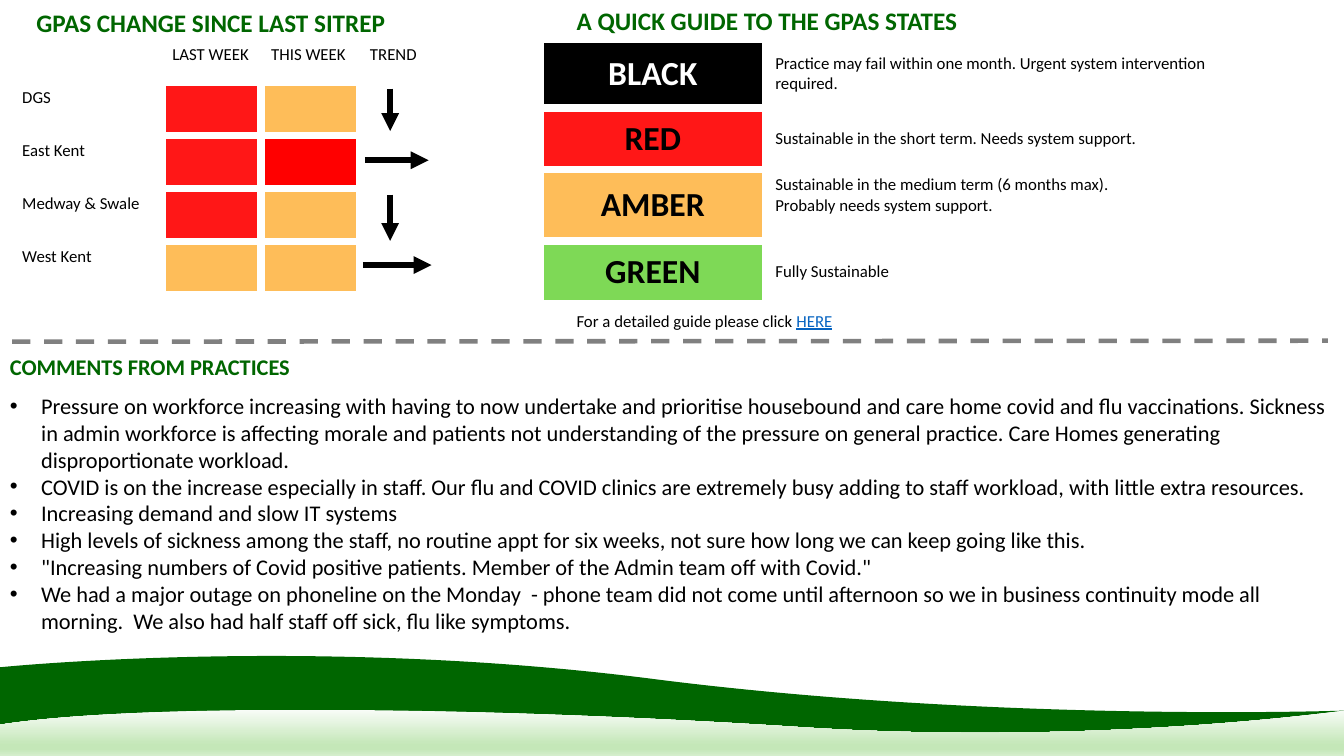
from lxml.etree import SubElement
from pptx import Presentation
from pptx.dml.color import RGBColor
from pptx.enum.dml import MSO_LINE
from pptx.enum.shapes import MSO_CONNECTOR
from pptx.enum.text import MSO_ANCHOR as Anchor, PP_ALIGN as Align
from pptx.oxml.ns import qn
from pptx.util import Inches, Pt

GREEN = RGBColor(0x00, 0x66, 0x00)
BLACK = RGBColor(0x00, 0x00, 0x00)
WHITE = RGBColor(0xFF, 0xFF, 0xFF)
GREY = RGBColor(0x80, 0x80, 0x80)
BLUE = RGBColor(0x05, 0x63, 0xC1)
RED = RGBColor(0xFF, 0x17, 0x17)
PURE = RGBColor(0xFF, 0x00, 0x00)
AMBER = RGBColor(0xFE, 0xBD, 0x59)
LIME = RGBColor(0x7E, 0xD9, 0x56)


def style(para, size, color=BLACK, bold=False):
    for run in para.runs:
        run.font.name = "Calibri"
        run.font.size = Pt(size)
        run.font.bold = bold
        run.font.color.rgb = color


def grid(left, top, cols, rows, cells):
    frame = shapes.add_table(len(rows), len(cols), Inches(left), Inches(top),
                             Inches(sum(cols)), Inches(sum(rows)))
    table = frame.table
    table.first_row = table.horz_banding = False
    for col, width in zip(table.columns, cols):
        col.width = Inches(width)
    for row, height, line in zip(table.rows, rows, cells):
        row.height = Inches(height)
        for cell, (text, fill) in zip(row.cells, line):
            if text:
                cell.text = text
            for para in cell.text_frame.paragraphs:
                style(para, 12)
            if fill is None:
                cell.fill.background()
            else:
                cell.fill.solid()
                cell.fill.fore_color.rgb = fill
            props = cell._tc.get_or_add_tcPr()
            for spot, side in enumerate(("a:lnL", "a:lnR", "a:lnT", "a:lnB")):
                edge = SubElement(props, qn(side), w=str(Pt(6)))
                paint = SubElement(edge, qn("a:solidFill"))
                SubElement(paint, qn("a:srgbClr"), val=str(WHITE))
                props.insert(spot, edge)
    return table


deck = Presentation()
deck.slide_width, deck.slide_height = Inches(13.33), Inches(7.5)
slide = deck.slides.add_slide(deck.slide_layouts[5])
shapes = slide.shapes

waves = [
    (6.5, [(0, 6.62), (0, 6.62), (3.12, 6.3), (6.51, 6.74),
           (9.9, 7.17), (13.33, 7.05), (13.33, 7.05)]),
    (7.04, [(0, 7.19), (1.42, 6.97), (4.74, 7.01), (7.87, 7.21),
            (10.84, 7.41), (13.33, 7.05), (13.33, 7.05)]),
]
for top, dots in waves:
    dots = [(Inches(x), Inches(y)) for x, y in dots + [(13.33, 7.51), (0, 7.51)]]
    pen = shapes.build_freeform(*dots[0])
    pen.add_line_segments(dots[1:], close=True)
    wave = pen.convert_to_shape()
    wave.shadow.inherit = False
    wave.line.fill.background()
    wave.fill.solid()
    wave.fill.fore_color.rgb = GREEN
    track = next(wave._element.iter(qn("a:path")))
    legs = track.findall(qn("a:lnTo"))
    for first in (0, 3):
        curve = SubElement(track, qn("a:cubicBezTo"))
        legs[first].addprevious(curve)
        for leg in legs[first:first + 3]:
            curve.append(leg[0])
            track.remove(leg)
    shift = Inches(top) - wave.top
    for dot in track.iter(qn("a:pt")):
        dot.set("y", str(int(dot.get("y")) - shift))
    wave.top, wave.height = Inches(top), wave.height - shift
    track.set("h", str(wave.height))

wave.fill.gradient()
wave.fill.gradient_angle = 270
stops = wave._element.spPr.find(qn("a:gradFill")).find(qn("a:gsLst"))
stops.clear()
for place, tint in ((0, "F8FCF7"), (74, "C4E7B8"), (83, "C4E7B8"), (100, "D8EFD0")):
    stop = SubElement(stops, qn("a:gs"), pos=str(place * 1000))
    SubElement(stop, qn("a:srgbClr"), val=tint)

heads = [
    ("GPAS CHANGE SINCE LAST SITREP", 0.26, 0.06, 5.78, 0.36, 18),
    ("A QUICK GUIDE TO THE GPAS STATES", 5.62, 0.01, 6.59, 0.39, 18),
    ("COMMENTS FROM PRACTICES", 0, 3.45, 5.78, 0.37, 16),
]
for text, left, top, width, height, size in heads:
    area = [Inches(n) for n in (left, top, width, height)]
    if text == heads[0][0]:
        head = shapes.title
        head.left, head.top, head.width, head.height = area
    else:
        head = shapes.add_textbox(*area)
    frame = head.text_frame
    frame.text = text
    frame.word_wrap = True
    frame.vertical_anchor = Anchor.BOTTOM
    frame.paragraphs[0].alignment = Align.LEFT
    style(frame.paragraphs[0], size, GREEN, True)

areas = [("DGS", RED, AMBER), ("East Kent", RED, PURE),
         ("Medway & Swale", RED, AMBER), ("West Kent", AMBER, AMBER)]
cells = [[(name, None) for name in ("", "LAST WEEK", "THIS WEEK", "TREND", "")]]
for name, last, now in areas:
    cells.append([(name, None), ("", last), ("", now), ("", None), ("", None)])
grid(0.12, 0.39, [1.49] + [0.98] * 4, [0.43] + [2.1 / 4] * 4, cells)

states = [
    ("BLACK", BLACK, "Practice may fail within one month. Urgent system intervention required."),
    ("RED", RED, "Sustainable in the short term. Needs system support."),
    ("AMBER", AMBER, "Sustainable in the medium term (6 months max).\nProbably needs system support."),
    ("GREEN", LIME, "Fully Sustainable"),
]
guide = grid(5.36, 0.39, [2.23, 5.1], [0.68, 0.61, 0.71, 0.62],
             [[(name, fill), (text, None)] for name, fill, text in states])
for row, (name, fill, text) in zip(guide.rows, states):
    for cell in row.cells:
        cell.vertical_anchor = Anchor.MIDDLE
    para = row.cells[0].text_frame.paragraphs[0]
    para.alignment = Align.CENTER
    style(para, 24, WHITE if fill == BLACK else BLACK, True)
guide.cell(2, 1).margin_bottom = Inches(0.25)

note = shapes.add_textbox(Inches(5.62), Inches(3.03), Inches(7.24), Inches(0.31))
note.text_frame.word_wrap = True
para = note.text_frame.paragraphs[0]
para.text = "For a detailed guide please click "
here = para.add_run()
here.text = "HERE"
style(para, 12)
here.font.color.rgb = BLUE
here.font.underline = True

lines = [
    (0.12, 3.39, 13.17, 3.38, GREY, 3.25),
    (3.87, 0.88, 3.87, 1.3, BLACK, 4.25),
    (3.62, 1.59, 4.25, 1.59, BLACK, 4.25),
    (3.87, 1.93, 3.87, 2.39, BLACK, 4.25),
    (3.6, 2.63, 4.28, 2.63, BLACK, 4.25),
]
for *ends, color, width in lines:
    line = shapes.add_connector(MSO_CONNECTOR.STRAIGHT, *[Inches(n) for n in ends])
    line.line.color.rgb = color
    line.line.width = Pt(width)
    if color == GREY:
        line.line.dash_style = MSO_LINE.DASH
    else:
        SubElement(line.line._get_or_add_ln(), qn("a:tailEnd"), type="triangle")
    SubElement(line._element.spPr, qn("a:effectLst"))

remarks = [
    "Pressure on workforce increasing with having to now undertake and prioritise housebound and care home covid and flu vaccinations. Sickness in admin workforce is affecting morale and patients not understanding of the pressure on general practice. Care Homes generating disproportionate workload.",
    "COVID is on the increase especially in staff. Our flu and COVID clinics are extremely busy adding to staff workload, with little extra resources.",
    "Increasing demand and slow IT systems",
    "High levels of sickness among the staff, no routine appt for six weeks, not sure how long we can keep going like this.",
    '"Increasing numbers of Covid positive patients. Member of the Admin team off with Covid."',
    "We had a major outage on phoneline on the Monday  - phone team did not come until afternoon so we in business continuity mode all morning.  We also had half staff off sick, flu like symptoms.",
]
body = shapes.add_textbox(Inches(0), Inches(3.84), Inches(13.33), Inches(2.52))
body.text_frame.word_wrap = True
body.text_frame.text = "\n".join(remarks)
for para in body.text_frame.paragraphs:
    props = para._p.get_or_add_pPr()
    props.set("marL", str(Inches(0.31)))
    props.set("indent", str(Inches(-0.31)))
    SubElement(props, qn("a:buFont"), typeface="Arial")
    SubElement(props, qn("a:buChar"), char="•")
    style(para, 16)

deck.save("out.pptx")
